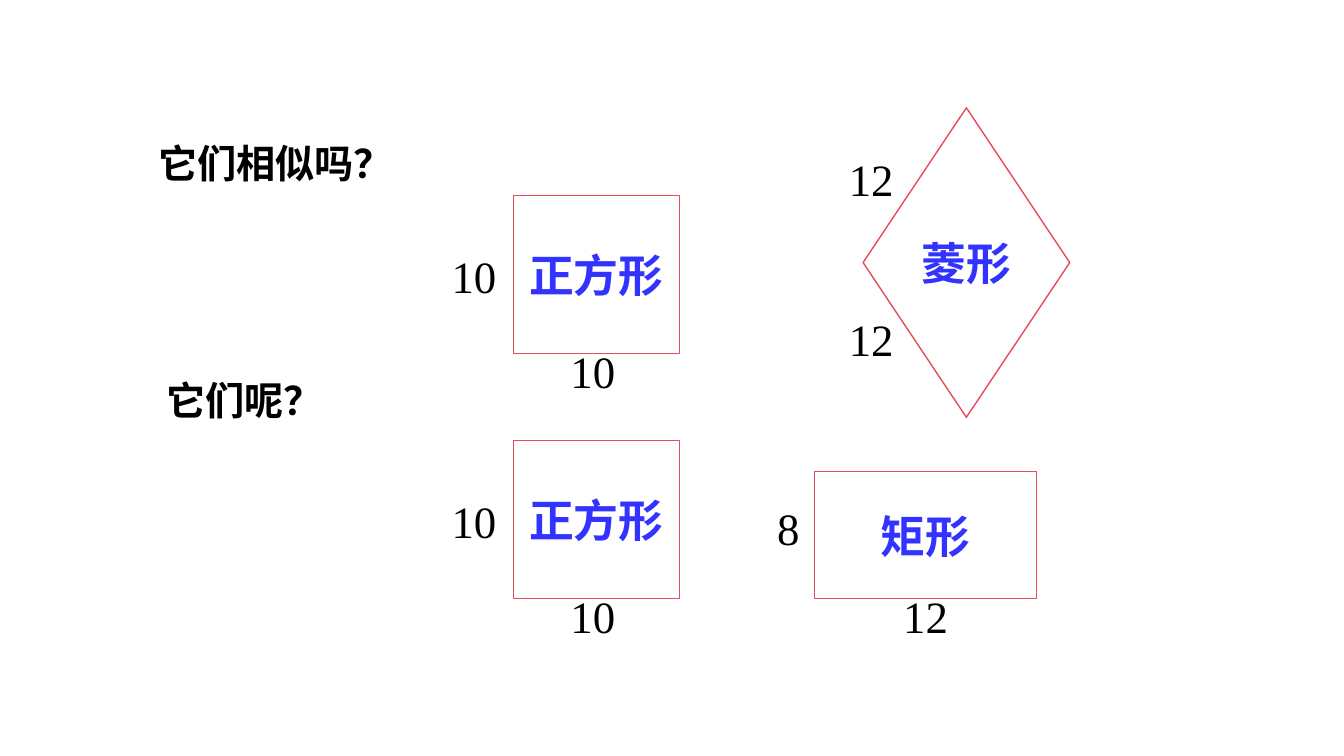
import pptx
import pptx.util
import pptx.dml.color
import pptx.enum.shapes
import pptx.enum.text

PX = 9144
SIZE = (1333, 750)
THEME = {
    "font": "Times New Roman",
    "name": "3333FF", "ink": "000000", "edge": "E54C5E", "fill": "FFFFFF",
    "big": 32, "ask": 28, "line": 1,
}

KIND = pptx.enum.shapes.MSO_SHAPE
FIT = pptx.enum.text.MSO_AUTO_SIZE
MID = pptx.enum.text.MSO_ANCHOR.MIDDLE
ALIGN = pptx.enum.text.PP_ALIGN

SQUARE = ("正方形", KIND.RECTANGLE, (165, 157), [("10", 47, 142), ("10", -71, 48)])
RHOMB = ("菱形", KIND.DIAMOND, (205, 307), [("12", -24, 197), ("12", -24, 39)])
OBLONG = ("矩形", KIND.RECTANGLE, (220, 126), [("12", 78, 111), ("8", -47, 24)])

FIGURES = [
    (SQUARE, 509, 194),
    (RHOMB, 856, 107),
    (SQUARE, 509, 437),
    (OBLONG, 808, 468),
]
ASKS = [
    ("它们相似吗？", (147, 133, 417, 57)),
    ("它们呢？", (155, 368, 347, 57)),
]
LABEL = (102, 64)


def rgb(key):
    return pptx.dml.color.RGBColor.from_string(THEME[key])


def scale(*box):
    return [pptx.util.Emu(n * PX) for n in box]


def write(shape, text, size="big", color="ink", bold=False, align=ALIGN.LEFT):
    para = shape.text_frame.paragraphs[0]
    para.alignment = align
    run = para.add_run()
    run.text = text
    font = run.font
    font.name = THEME["font"]
    font.size = pptx.util.Pt(THEME[size])
    font.bold = bold
    font.color.rgb = rgb(color)


def note(slide, text, box, **style):
    shape = slide.shapes.add_textbox(*scale(*box))
    shape.text_frame.word_wrap = True
    shape.text_frame.auto_size = FIT.SHAPE_TO_FIT_TEXT
    write(shape, text, **style)


def figure(slide, form, left, top):
    name, kind, size, sides = form
    shape = slide.shapes.add_shape(kind, *scale(left, top, *size))
    shape.shadow.inherit = False
    shape.fill.solid()
    shape.fill.fore_color.rgb = rgb("fill")
    shape.line.color.rgb = rgb("edge")
    shape.line.width = pptx.util.Pt(THEME["line"])
    shape.text_frame.word_wrap = False
    shape.text_frame.vertical_anchor = MID
    write(shape, name, color="name", bold=True, align=ALIGN.CENTER)
    for text, dx, dy in sides:
        note(slide, text, (left + dx, top + dy, *LABEL))


def main():
    deck = pptx.Presentation()
    deck.slide_width, deck.slide_height = scale(*SIZE)
    slide = deck.slides.add_slide(deck.slide_layouts[6])
    for form, left, top in FIGURES:
        figure(slide, form, left, top)
    for text, box in ASKS:
        note(slide, text, box, size="ask", bold=True)
    deck.save("out.pptx")


if __name__ == "__main__":
    main()
